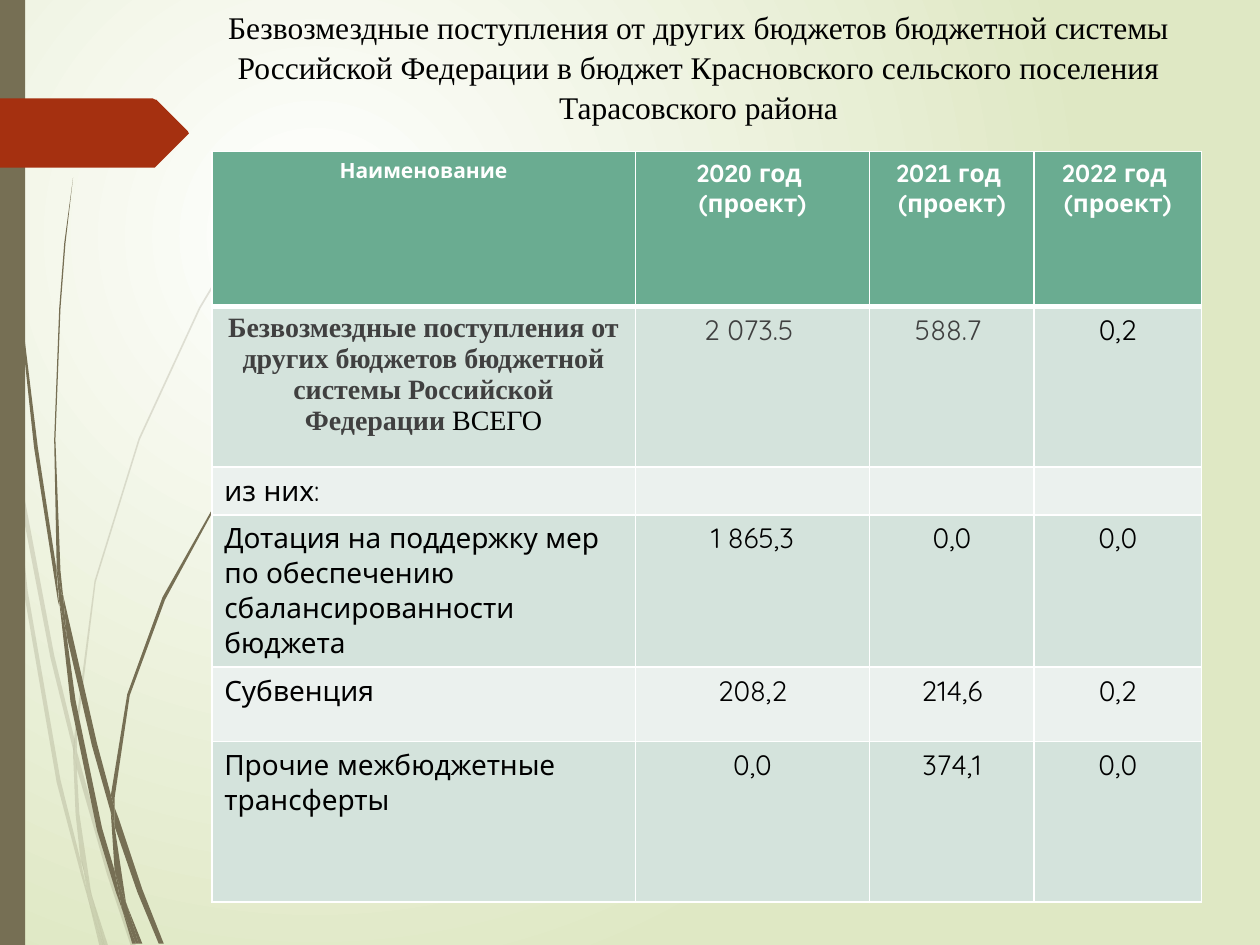
"""Build the slide on transfers to the budget of a rural settlement."""
from dataclasses import dataclass

from pptx import Presentation
from pptx.dml.color import RGBColor
from pptx.enum import shapes, text
from pptx.oxml import ns, xmlchemy
from pptx.util import Pt

SERIF, SANS, ARIAL = "Times New Roman", "Quicksand", "Arial"
OLIVE, RED, WHITE, BLACK, GRAY = "766F54", "A53010", "FFFFFF", "000000", "404040"
HEADER, BAND, LIGHT = "6AAC91", "D4E3DC", "EBF1EE"
GRID_UNIT = Pt(0.72)
BREAK = "\v"


@dataclass(frozen=True)
class Piece:
    text: str
    font: str = SANS
    size: float = 16
    color: str = BLACK
    bold: bool = False


@dataclass(frozen=True)
class Row:
    height: float
    fill: str
    cells: tuple


Outline = list[tuple[int, int]]

PALE_STRANDS: list[Outline] = [
    [(8, 350), (6, 322), (0, 282), (0, 299), (7, 344)],
    [(40, 522), (59, 599), (59, 586), (43, 520), (10, 345), (12, 376)],
    [(64, 607), (61, 596), (61, 610), (85, 694), (104, 751), (108, 751), (88, 692)],
    [(83, 751), (86, 751), (73, 711)],
    [(64, 683), (48, 619), (22, 469), (12, 376), (8, 350), (19, 470), (45, 621),
     (64, 693), (70, 714), (69, 707)],
    [(58, 599), (60, 646), (64, 683), (67, 692), (73, 711), (72, 706), (63, 646),
     (61, 610), (61, 608)],
    [(61, 584), (76, 462), (111, 349), (159, 245), (187, 198), (201, 175), (217, 154),
     (217, 153), (201, 175), (186, 197), (158, 244), (110, 348), (75, 461), (59, 584),
     (59, 586), (61, 596)],
    [(70, 714), (79, 751), (82, 751)],
    [(61, 608), (61, 610), (61, 596), (59, 586), (58, 599)],
    [(67, 692), (65, 683), (69, 707), (70, 714), (82, 751), (83, 751), (73, 711)],
]
DARK_STRANDS: list[Outline] = [
    [(5, 110), (14, 233), (27, 355), (46, 477), (47, 481), (45, 457), (45, 453),
     (30, 355), (15, 232), (6, 109), (4, 48), (3, 0), (2, 0), (3, 48)],
    [(73, 592), (88, 645), (88, 633), (88, 631), (77, 590), (50, 472), (53, 505)],
    [(94, 649), (91, 641), (91, 656), (109, 708), (126, 749), (130, 749), (113, 706)],
    [(91, 691), (81, 657), (60, 556), (53, 505), (47, 477), (56, 557), (77, 659),
     (92, 708), (97, 722), (96, 717)],
    [(50, 472), (48, 453), (44, 349), (48, 245), (52, 193), (58, 141), (51, 193),
     (47, 245), (43, 349), (45, 449), (49, 472)],
    [(110, 749), (113, 749), (101, 719)],
    [(47, 477), (53, 505), (50, 472), (49, 472), (45, 449), (45, 453)],
    [(91, 633), (103, 552), (131, 476), (169, 406), (191, 374), (203, 359), (216, 344),
     (215, 344), (203, 358), (191, 373), (168, 405), (129, 474), (101, 551), (88, 631),
     (91, 641)],
    [(97, 722), (105, 749), (108, 749)],
    [(88, 645), (91, 691), (96, 706), (101, 719), (100, 716), (91, 656), (90, 651)],
    [(88, 645), (90, 651), (91, 656), (91, 641), (88, 631), (88, 633)],
    [(96, 706), (91, 691), (96, 717), (97, 722), (108, 749), (110, 749), (101, 719)],
]
ARROW: Outline = [(149, 107), (124, 132), (123, 133), (121, 133), (0, 133), (0, 78),
                  (121, 78), (123, 79), (124, 79), (149, 104), (150, 106)]


def rgb(color: str) -> RGBColor:
    return RGBColor.from_string(color)


def add_element(parent, tag: str, **attributes):
    child = xmlchemy.OxmlElement(tag)
    for name, value in attributes.items():
        child.set(name, str(value))
    parent.append(child)
    return child


def paint(shape, color: str, opacity: int = 100) -> None:
    shape.shadow.inherit = False
    shape.fill.solid()
    shape.fill.fore_color.rgb = rgb(color)
    shape.line.fill.background()
    if opacity < 100:
        solid = shape._element.spPr.find(ns.qn("a:solidFill"))
        add_element(solid[0], "a:alpha", val=opacity * 1000)


def add_outline(collection, outline: Outline, color: str, opacity: int = 100) -> None:
    builder = collection.build_freeform(*outline[0], scale=GRID_UNIT)
    builder.add_line_segments(outline[1:], close=True)
    paint(builder.convert_to_shape(), color, opacity)


def set_background(slide) -> None:
    fill = slide.background.fill
    fill.gradient()
    for stop, color, position in zip(fill.gradient_stops, (WHITE, "DFE8C4"), (0, 1)):
        stop.color.rgb = rgb(color)
        stop.position = position
    gradient = slide._element.find(".//" + ns.qn("a:gradFill"))
    gradient.remove(gradient.find(ns.qn("a:lin")))
    radial = add_element(gradient, "a:path", path="circle")
    add_element(radial, "a:fillToRect", l=50000, t=50000, r=100000, b=100000)


def format_run(run, piece: Piece) -> None:
    run.font.name = piece.font
    run.font.size = Pt(piece.size)
    run.font.bold = piece.bold
    run.font.color.rgb = rgb(piece.color)


def write(paragraph, pieces: tuple) -> None:
    for piece in pieces:
        if piece.text == BREAK:
            paragraph.add_line_break()
            continue
        run = paragraph.add_run()
        run.text = piece.text
        format_run(run, piece)
    if not pieces:
        add_element(paragraph._p, "a:endParaRPr", sz=1600)


def set_borders(cell, top: float, bottom: float) -> None:
    properties = cell._tc.get_or_add_tcPr()
    widths = {"a:lnL": 1, "a:lnR": 1, "a:lnT": top, "a:lnB": bottom}
    for index, (tag, width) in enumerate(widths.items()):
        line = add_element(properties, tag, w=Pt(width))
        add_element(add_element(line, "a:solidFill"), "a:srgbClr", val=WHITE)
        properties.insert(index, line)


def year_heading(start: str, end: str) -> tuple:
    style = {"size": 14, "color": WHITE, "bold": True}
    return (Piece(start, **style), Piece(end, ARIAL, **style), Piece(" год ", **style),
            Piece(BREAK), Piece("(проект)", **style))


def plain(*values: str) -> tuple:
    return tuple((Piece(value),) if value else () for value in values)


ROWS = [
    Row(88.5, HEADER, ((Piece("Наименование", size=12, color=WHITE, bold=True),),
                       year_heading("20", "20"), year_heading("202", "1"),
                       year_heading("202", "2"))),
    Row(92, BAND, ((Piece("Безвозмездные поступления от других бюджетов бюджетной "
                          "системы Российской Федерации ", SERIF, color=GRAY, bold=True),
                    Piece("ВСЕГО", SERIF)),
                   (Piece("2 073.5 ", color=GRAY),), (Piece("588.7 ", color=GRAY),),
                   (Piece("0,2"),))),
    Row(24.5, LIGHT, plain("из них:", "", "", "")),
    Row(77, BAND, plain("Дотация на поддержку мер по обеспечению сбалансированности бюджета",
                        "1 865,3", "0,0", "0,0")),
    Row(42.5, LIGHT, plain("Субвенция", "208,2", "214,6", "0,2")),
    Row(92, BAND, plain("Прочие межбюджетные трансферты", "0,0", "374,1", "0,0")),
]
COLUMN_WIDTHS = (242, 134, 94, 95.5)


def add_budget_table(slide) -> None:
    height = sum(row.height for row in ROWS)
    table = slide.shapes.add_table(len(ROWS), len(COLUMN_WIDTHS), Pt(121), Pt(86.5),
                                   Pt(sum(COLUMN_WIDTHS)), Pt(height)).table
    table.first_row = table.horz_banding = False
    for column, width in zip(table.columns, COLUMN_WIDTHS):
        column.width = Pt(width)
    for row_index, row in enumerate(ROWS):
        table.rows[row_index].height = Pt(row.height)
        for column_index, pieces in enumerate(row.cells):
            cell = table.cell(row_index, column_index)
            cell.fill.solid()
            cell.fill.fore_color.rgb = rgb(row.fill)
            set_borders(cell, 3 if row_index == 1 else 1, 3 if row_index == 0 else 1)
            paragraph = cell.text_frame.paragraphs[0]
            if column_index or row_index < 2:
                paragraph.alignment = text.PP_ALIGN.CENTER
            write(paragraph, pieces)


def set_title(slide) -> None:
    title = slide.shapes.title
    title.left, title.top, title.width, title.height = Pt(78.5), Pt(0), Pt(641.5), Pt(93.6)
    frame = title.text_frame
    piece = Piece("Безвозмездные поступления от других бюджетов бюджетной системы Российской "
                  "Федерации в бюджет Красновского сельского поселения Тарасовского района",
                  SERIF, 18)
    frame.text = piece.text
    frame.word_wrap = True
    frame.auto_size = text.MSO_AUTO_SIZE.NONE
    frame.vertical_anchor = text.MSO_ANCHOR.TOP
    paragraph = frame.paragraphs[0]
    paragraph.alignment = text.PP_ALIGN.CENTER
    paragraph.line_spacing = 1.05
    format_run(paragraph.runs[0], piece)


def main() -> None:
    presentation = Presentation()
    presentation.slide_width, presentation.slide_height = Pt(720), Pt(540)
    slide = presentation.slides.add_slide(presentation.slide_layouts[5])
    set_background(slide)
    for strands, opacity in ((PALE_STRANDS, 20), (DARK_STRANDS, 100)):
        group = slide.shapes.add_group_shape()
        for strand in strands:
            add_outline(group.shapes, strand, OLIVE, opacity)
    bar = slide.shapes.add_shape(shapes.MSO_SHAPE.RECTANGLE, Pt(0), Pt(0), Pt(14.4), Pt(540))
    paint(bar, OLIVE)
    add_outline(slide.shapes, ARROW, RED)
    set_title(slide)
    add_budget_table(slide)
    presentation.save("out.pptx")


if __name__ == "__main__":
    main()
